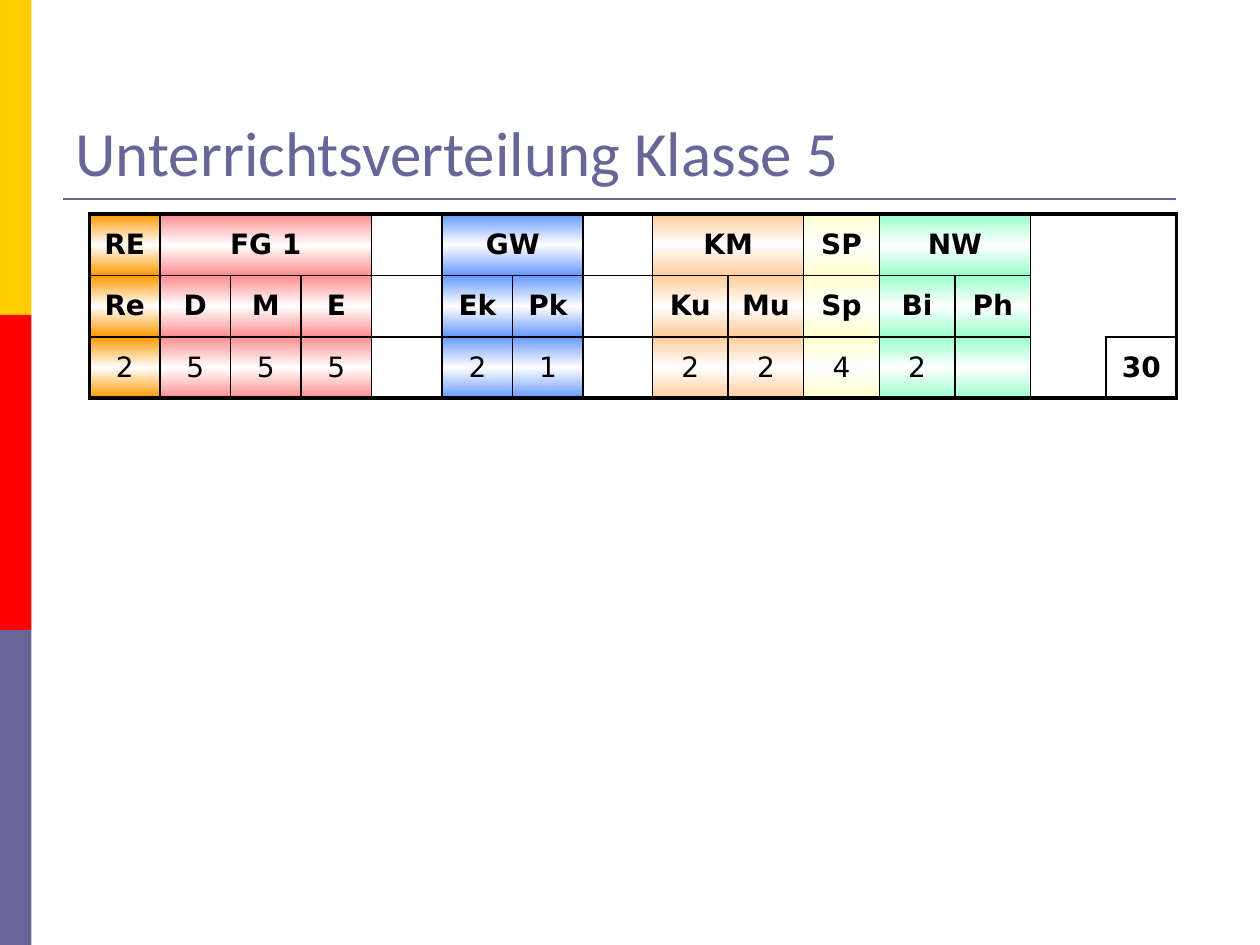
from dataclasses import dataclass

import pptx
import pptx.util
import pptx.dml.color
import pptx.enum.shapes
import pptx.enum.text
import pptx.oxml
import pptx.oxml.ns
from pptx.util import Inches


@dataclass(frozen=True)
class Theme:
    accent: str = "666699"
    stripes: tuple = ("FFCC00", "FF0000", "666699")
    ink: str = "000000"
    religion: str = "FF9900"
    languages: str = "FF8D8D"
    society: str = "6699FF"
    arts: str = "FFCC99"
    sport: str = "FFFFCC"
    science: str = "99FFCC"
    title_font: str = "Calibri"
    table_font: str = "DejaVu Sans"
    title_size: int = 36
    table_size: int = 16
    rule_width: float = 1.5
    frame_width: float = 2.25
    grid_width: float = 1


THEME = Theme()

# Subject group, colour, and its subjects with weekly lessons
GROUPS = [
    ("RE", THEME.religion, [("Re", "2")]),
    ("FG 1", THEME.languages, [("D", "5"), ("M", "5"), ("E", "5")]),
    ("", None, [("", "")]),
    ("GW", THEME.society, [("Ek", "2"), ("Pk", "1")]),
    ("", None, [("", "")]),
    ("KM", THEME.arts, [("Ku", "2"), ("Mu", "2")]),
    ("SP", THEME.sport, [("Sp", "4")]),
    ("NW", THEME.science, [("Bi", "2"), ("Ph", "")]),
]
TOTAL = "30"
COLUMN_WIDTHS = [0.56] * 7 + [0.55] + [0.6] * 6 + [0.56]
ROW_COUNT = 3


@dataclass
class Block:
    """One visible cell, which may span several rows and columns."""
    row: int
    column: int
    text: str = ""
    colour: str = None
    bold: bool = True
    rows: int = 1
    columns: int = 1
    open_sides: str = ""


def rgb(value):
    return pptx.dml.color.RGBColor.from_string(value)


def format_font(font, **values):
    font.color.rgb = rgb(values.pop("colour"))
    for name, value in values.items():
        setattr(font, name, value)


def append_xml(parent, tag, body, attributes=""):
    namespace = pptx.oxml.ns.nsdecls("a")
    parent.append(pptx.oxml.parse_xml(
        f"<a:{tag} {namespace} {attributes}>{body}</a:{tag}>"))


def solid(colour):
    return f'<a:solidFill><a:srgbClr val="{colour}"/></a:solidFill>'


def add_side_stripes(slide, left, top, width, height):
    stripe_height = height // len(THEME.stripes)
    for index, colour in enumerate(THEME.stripes):
        stripe = slide.shapes.add_shape(
            pptx.enum.shapes.MSO_SHAPE.RECTANGLE,
            left, top + index * stripe_height, width, stripe_height)
        stripe.shadow.inherit = False
        stripe.fill.solid()
        stripe.fill.fore_color.rgb = rgb(colour)
        stripe.line.fill.background()


def add_heading(slide, left, top, width, height):
    heading = slide.shapes.title
    box = {"left": left, "top": top, "width": width, "height": height}
    for name, value in box.items():
        setattr(heading, name, value)
    frame = heading.text_frame
    frame.text = "Unterrichtsverteilung Klasse 5"
    frame.vertical_anchor = pptx.enum.text.MSO_ANCHOR.BOTTOM
    frame.paragraphs[0].alignment = pptx.enum.text.PP_ALIGN.LEFT
    format_font(frame.paragraphs[0].runs[0].font, colour=THEME.accent,
                name=THEME.title_font, size=pptx.util.Pt(THEME.title_size))


def add_heading_rule(slide, left, top, width):
    rule = slide.shapes.add_connector(
        pptx.enum.shapes.MSO_CONNECTOR.STRAIGHT, left, top, left + width, top)
    rule.line.color.rgb = rgb(THEME.accent)
    rule.line.width = pptx.util.Pt(THEME.rule_width)
    append_xml(rule._element.spPr, "effectLst", "")


def plan_blocks():
    blocks, column = [], 0
    for group, colour, subjects in GROUPS:
        blocks.append(Block(0, column, group, colour, columns=len(subjects)))
        for subject, lessons in subjects:
            blocks.append(Block(1, column, subject, colour))
            blocks.append(Block(2, column, lessons, colour, bold=False))
            column += 1
    # Blank corner around the total
    blocks.append(Block(0, column, rows=3, open_sides="R"))
    blocks.append(Block(0, column + 1, rows=2, open_sides="L"))
    blocks.append(Block(2, column + 1, TOTAL))
    return blocks


def format_cell(cell, block, row, column):
    """Draw the borders on the block's outline, then its fill."""
    last_row = block.row + block.rows
    last_column = block.column + block.columns
    is_origin = (row, column) == (block.row, block.column)
    # Side: on the block's edge, on the table's edge
    sides = {
        "L": (column == block.column, block.column == 0),
        "R": (column + 1 == last_column, last_column == len(COLUMN_WIDTHS)),
        "T": (row == block.row, block.row == 0),
        "B": (row + 1 == last_row, last_row == ROW_COUNT),
    }
    properties = cell._tc.get_or_add_tcPr()
    for side, (on_block_edge, on_frame) in sides.items():
        drawn = (is_origin or on_block_edge) and side not in block.open_sides
        points = THEME.frame_width if on_frame else THEME.grid_width
        append_xml(properties, f"ln{side}",
                   solid(THEME.ink) if drawn else "<a:noFill/>",
                   f'w="{int(pptx.util.Pt(points))}"')
    if block.colour:
        stops = "".join(
            f'<a:gs pos="{position}"><a:srgbClr val="{colour}"/></a:gs>'
            for position, colour in ((0, block.colour), (50000, "FFFFFF"),
                                     (100000, block.colour)))
        append_xml(properties, "gradFill",
                   f'<a:gsLst>{stops}</a:gsLst><a:lin ang="5400000" scaled="0"/>')
    else:
        append_xml(properties, "noFill", "")


def write_cell(cell, block):
    cell.vertical_anchor = pptx.enum.text.MSO_ANCHOR.MIDDLE
    cell.margin_left = cell.margin_right = Inches(0.05)
    paragraph = cell.text_frame.paragraphs[0]
    paragraph.alignment = pptx.enum.text.PP_ALIGN.CENTER
    if block.text:
        run = paragraph.add_run()
        run.text = block.text
        format_font(run.font, colour=THEME.ink, name=THEME.table_font,
                    size=pptx.util.Pt(THEME.table_size), bold=block.bold)


def add_lesson_table(slide, left, top, width, height):
    lessons = slide.shapes.add_table(
        ROW_COUNT, len(COLUMN_WIDTHS), left, top, width, height).table
    lessons.first_row = lessons.horz_banding = False
    for column, column_width in zip(lessons.columns, COLUMN_WIDTHS):
        column.width = Inches(column_width)
    for block in plan_blocks():
        origin = lessons.cell(block.row, block.column)
        if block.rows * block.columns > 1:
            origin.merge(lessons.cell(block.row + block.rows - 1,
                                      block.column + block.columns - 1))
        for row in range(block.row, block.row + block.rows):
            for column in range(block.column, block.column + block.columns):
                format_cell(lessons.cell(row, column), block, row, column)
        write_cell(origin, block)


def main():
    deck = pptx.Presentation()
    deck.slide_width, deck.slide_height = Inches(10), Inches(7.5)
    slide = deck.slides.add_slide(deck.slide_layouts[5])
    add_side_stripes(slide, Inches(0), Inches(0), Inches(0.25), Inches(7.5))
    add_heading_rule(slide, Inches(0.5), Inches(1.58), Inches(8.83))
    add_heading(slide, Inches(0.5), Inches(0.3), Inches(9), Inches(1.25))
    add_lesson_table(slide, Inches(0.71), Inches(1.7), Inches(8.63), Inches(1.46))
    deck.save("out.pptx")


if __name__ == "__main__":
    main()
